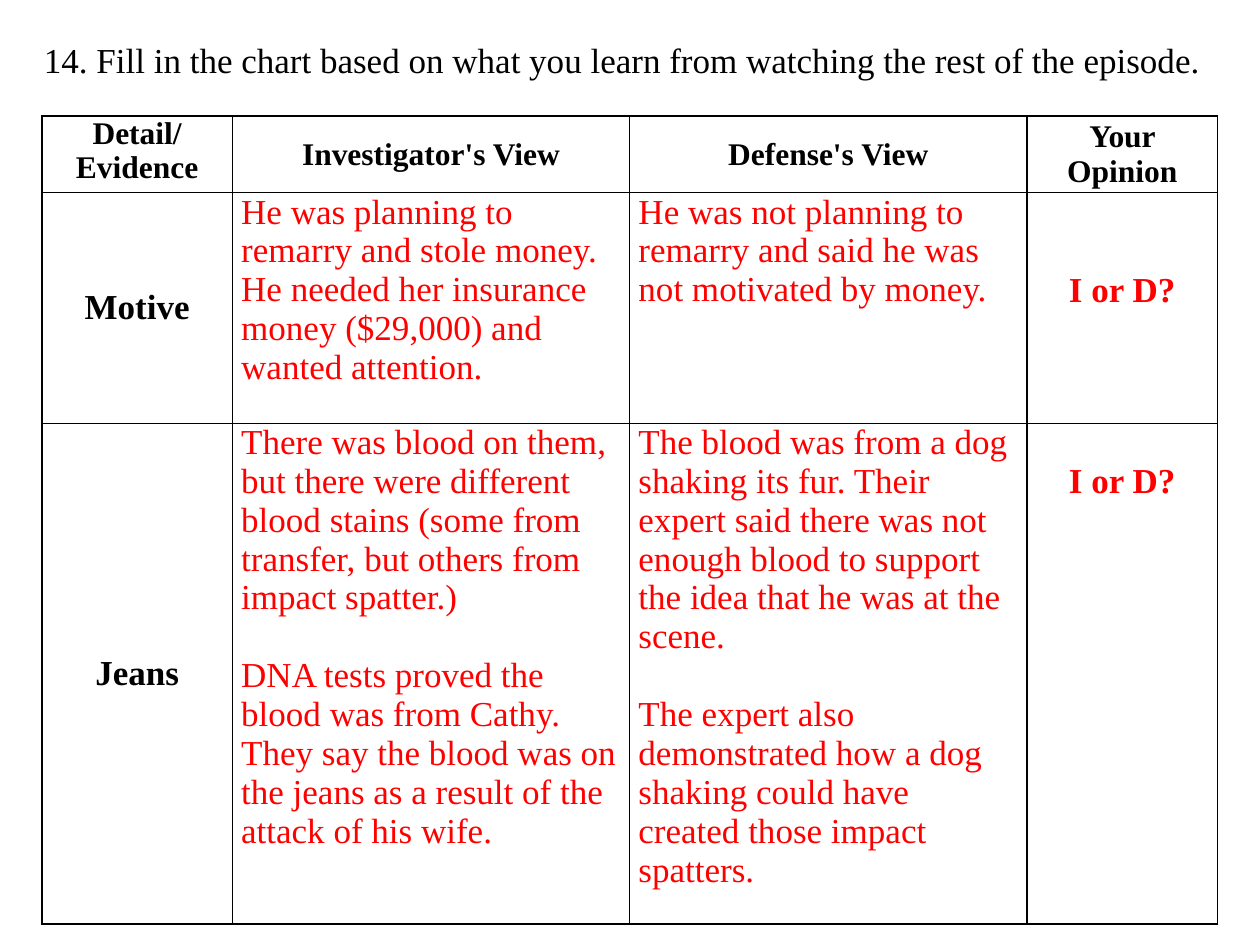
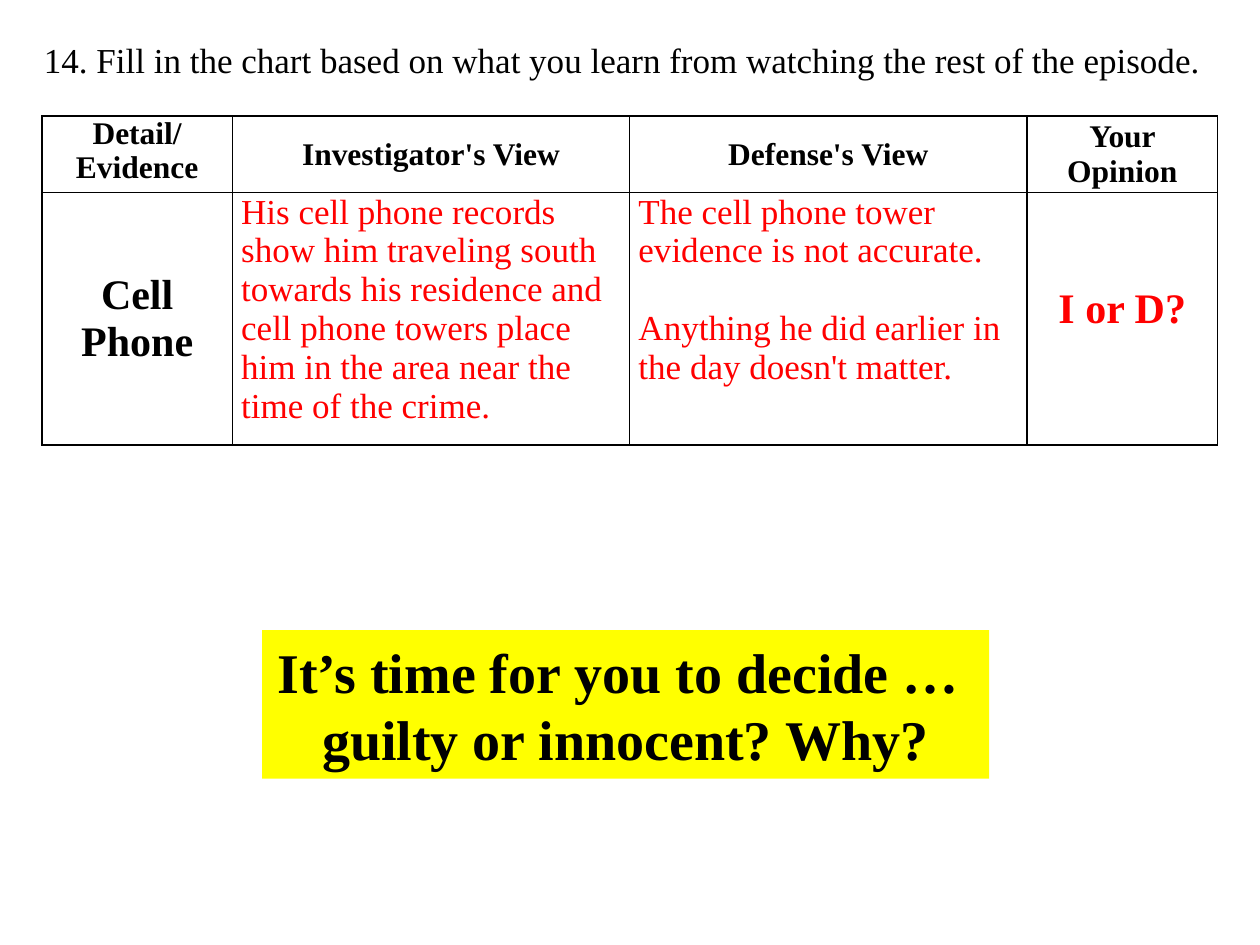
from lxml.etree import SubElement
from pptx import Presentation
from pptx.dml.color import RGBColor
from pptx.enum.shapes import MSO_SHAPE as Shape
from pptx.enum.text import MSO_ANCHOR as Anchor, PP_ALIGN as Align
from pptx.oxml.ns import qn
from pptx.util import Inches, Pt

SLIDE_W, SLIDE_H = Inches(10), Inches(7.5)
FONT = "Times New Roman"
BLACK = RGBColor(0, 0, 0)
RED = RGBColor(255, 0, 0)
YELLOW = RGBColor(255, 255, 0)

LINE_SPACING = 1.115  # line height of the font, in ems
HEADER_SIZE, BODY_SIZE, LARGE_SIZE, DECISION_SIZE = 18, 20, 24, 32

# Boxes: left, top, width, height as percent of the slide
QUESTION_BOX = (2.5, 3.33, 95.1, 5.87)
CHART_BOX = (3.33, 12.27, 93.3)  # its height follows from the rows
DECISION_BOX = (20.8, 66.67, 57.7, 15.73)

COLUMN_SHARES = (0.162, 0.338, 0.338, 0.162)  # of the chart's width
HEADER_ROW, MOTIVE_ROW, JEANS_ROW, PHONE_ROW = 8.13, 24.4, 53.0, 26.67

QUESTION = "14. Fill in the chart based on what you learn from watching the rest of the episode."
HEADINGS = ("Detail/\nEvidence", "Investigator's View", "Defense's View", "Your Opinion")
OPINION = "I or D?"
DECISION = "It’s time for you to decide … \nguilty or innocent? Why?"

# Each row: height, size of label and opinion, lines above the opinion,
# label, investigator's paragraphs, defense's paragraphs
FIRST_EVIDENCE = [
    (MOTIVE_ROW, BODY_SIZE, 2, "Motive",
     ["He was planning to remarry and stole money. He needed her insurance money "
      "($29,000) and wanted attention."],
     ["He was not planning to remarry and said he was not motivated by money."]),
    (JEANS_ROW, BODY_SIZE, 1, "Jeans",
     ["There was blood on them, but there were different blood stains "
      "(some from transfer, but others from impact spatter.)",
      "DNA tests proved the blood was from Cathy. They say the blood was on the "
      "jeans as a result of the attack of his wife."],
     ["The blood was from a dog shaking its fur. Their expert said there was not "
      "enough blood to support the idea that he was at the scene.",
      "The expert also demonstrated how a dog shaking could have created those "
      "impact spatters."]),
]
LAST_EVIDENCE = [
    (PHONE_ROW, LARGE_SIZE, 2, "Cell Phone",
     ["His cell phone records show him traveling south towards his residence and "
      "cell phone towers place him in the area near the time of the crime."],
     ["The cell phone tower evidence is not accurate.",
      "Anything he did earlier in the day doesn't matter."]),
]


def across(percent):
    return round(SLIDE_W * percent / 100)


def down(percent):
    return round(SLIDE_H * percent / 100)


def place(box):
    left, top, width, height = box
    return across(left), down(top), across(width), down(height)


def write(frame, paragraphs, size, color=BLACK, bold=False, align=Align.LEFT):
    """Fill a frame; paragraphs stand one line apart, newlines become line breaks."""
    for number, text in enumerate(paragraphs):
        paragraph = frame.add_paragraph() if number else frame.paragraphs[0]
        paragraph.alignment = align
        if number:
            paragraph.space_before = Pt(size * LINE_SPACING)
        for line_number, line in enumerate(text.split("\n")):
            if line_number:
                paragraph.add_line_break()
            run = paragraph.add_run()
            run.text = line
            run.font.name, run.font.size = FONT, Pt(size)
            run.font.bold, run.font.color.rgb = bold, color


def style_cell(cell, anchor, lines_above=0, size=BODY_SIZE):
    cell.margin_left = cell.margin_right = Inches(0.07)
    cell.margin_top = Pt(lines_above * size * LINE_SPACING)
    cell.margin_bottom = 0
    cell.vertical_anchor = anchor
    properties = cell._tc.get_or_add_tcPr()
    for side in ("lnL", "lnR", "lnT", "lnB"):
        border = SubElement(properties, qn(f"a:{side}"), w=str(Pt(1)))
        fill = SubElement(border, qn("a:solidFill"))
        SubElement(fill, qn("a:srgbClr"), val=str(BLACK))
    cell.fill.background()


def add_question(slide, box):
    frame = slide.shapes.add_textbox(*place(box)).text_frame
    frame.word_wrap = True
    frame.vertical_anchor = Anchor.MIDDLE
    write(frame, [QUESTION], BODY_SIZE, align=Align.JUSTIFY)


def add_evidence_chart(slide, box, evidence):
    heights = [HEADER_ROW] + [entry[0] for entry in evidence]
    frame = slide.shapes.add_table(len(heights), len(HEADINGS), *place((*box, sum(heights))))
    chart = frame.table
    chart.first_row = chart.horz_banding = False
    for column, share in zip(chart.columns, COLUMN_SHARES):
        column.width = across(box[2] * share)
    for row, height in zip(chart.rows, heights):
        row.height = down(height)

    # Headings
    for column, heading in enumerate(HEADINGS):
        cell = chart.cell(0, column)
        style_cell(cell, Anchor.MIDDLE if column else Anchor.TOP)
        write(cell.text_frame, [heading], HEADER_SIZE, bold=True, align=Align.CENTER)

    # Evidence: label, both views, opinion
    for row, (_, size, lines_above, label, *views) in enumerate(evidence, 1):
        label_cell, *view_cells, opinion_cell = chart.rows[row].cells
        style_cell(label_cell, Anchor.MIDDLE)
        write(label_cell.text_frame, [label], size, bold=True, align=Align.CENTER)
        for cell, view in zip(view_cells, views):
            style_cell(cell, Anchor.TOP)
            write(cell.text_frame, view, BODY_SIZE, RED)
        style_cell(opinion_cell, Anchor.TOP, lines_above, size)
        write(opinion_cell.text_frame, [OPINION], size, RED, True, Align.CENTER)


def add_decision(slide, box):
    banner = slide.shapes.add_shape(Shape.RECTANGLE, *place(box))
    banner.shadow.inherit = False
    banner.fill.solid()
    banner.fill.fore_color.rgb = YELLOW
    banner.line.fill.background()
    banner.text_frame.word_wrap = False
    banner.text_frame.vertical_anchor = Anchor.MIDDLE
    write(banner.text_frame, [DECISION], DECISION_SIZE, bold=True, align=Align.CENTER)


def add_chart_slide(deck, evidence):
    slide = deck.slides.add_slide(deck.slide_layouts[6])
    add_evidence_chart(slide, CHART_BOX, evidence)
    add_question(slide, QUESTION_BOX)
    return slide


def main():
    deck = Presentation()
    deck.slide_width, deck.slide_height = SLIDE_W, SLIDE_H
    add_chart_slide(deck, FIRST_EVIDENCE)
    closing = add_chart_slide(deck, LAST_EVIDENCE)
    add_decision(closing, DECISION_BOX)
    deck.save("out.pptx")


if __name__ == "__main__":
    main()
